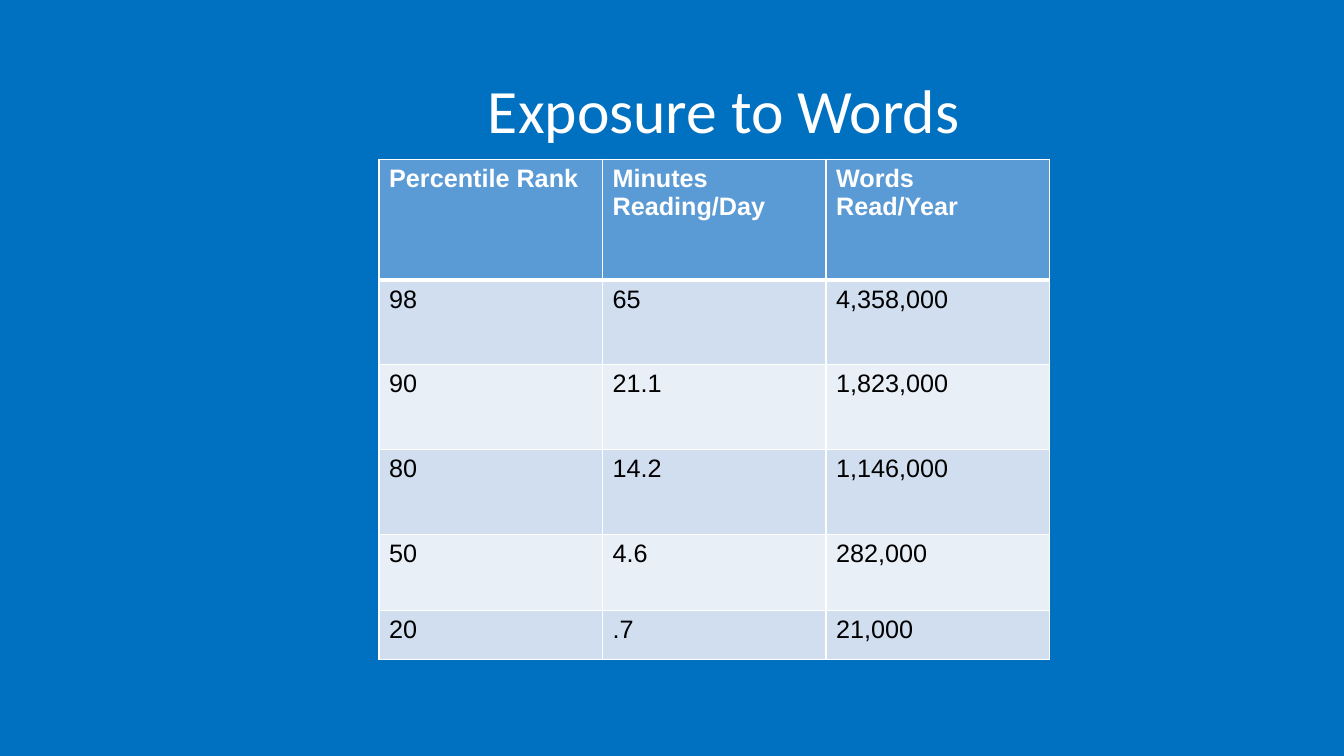
from dataclasses import dataclass

from lxml.etree import SubElement
from pptx import Presentation
from pptx.dml.color import RGBColor as Color
from pptx.enum.text import MSO_ANCHOR as Anchor
from pptx.oxml.ns import qn
from pptx.util import Inches, Pt


@dataclass(frozen=True)
class Theme:
    background: str = "0070C0"
    white: str = "FFFFFF"
    black: str = "000000"
    header: str = "5B9BD5"
    bands: tuple = ("D0DEEF", "E9EFF7")
    title_font: str = "Calibri"
    table_font: str = "Arial"
    title_size: int = 44
    table_size: int = 18
    thin: int = 1
    thick: int = 3


THEME = Theme()
TITLE_BOX = (0.92, 0.4, 11.5, 1.45)
TITLE_INDENT = 3.92
TABLE_BOX = (3.76, 1.58, 6.65, 4.96)
ROW_HEIGHTS = (1.2, 0.84, 0.84, 0.84, 0.76, 0.48)
READING = (
    ("Percentile Rank", "Minutes Reading/Day", "Words Read/Year"),
    ("98", "65", "4,358,000"),
    ("90", "21.1", "1,823,000"),
    ("80", "14.2", "1,146,000"),
    ("50", "4.6", "282,000"),
    ("20", ".7", "21,000"),
)


def style_text(para, font, size, color, bold=False):
    for span in para.runs:
        span.font.name = font
        span.font.size = Pt(size)
        span.font.bold = bold
        span.font.color.rgb = Color.from_string(color)


def add_title(page, box, text):
    frame = page.shapes.add_textbox(*map(Inches, box)).text_frame
    frame.word_wrap = True
    frame.vertical_anchor = Anchor.MIDDLE
    frame.margin_left = Inches(TITLE_INDENT)
    frame.text = text
    para = frame.paragraphs[0]
    para.line_spacing = 0.9
    style_text(para, THEME.title_font, THEME.title_size, THEME.white)


def draw_borders(cell, top, bottom):
    properties = cell._tc.get_or_add_tcPr()
    widths = {"L": THEME.thin, "R": THEME.thin, "T": top, "B": bottom}
    for side, width in widths.items():
        line = SubElement(properties, qn(f"a:ln{side}"), w=str(Pt(width)))
        fill = SubElement(line, qn("a:solidFill"))
        SubElement(fill, qn("a:srgbClr"), val=THEME.white)


def style_cell(cell, row):
    is_header = row == 0
    draw_borders(
        cell,
        top=THEME.thick if row == 1 else THEME.thin,
        bottom=THEME.thick if is_header else THEME.thin,
    )
    fill = THEME.header if is_header else THEME.bands[(row - 1) % 2]
    cell.fill.solid()
    cell.fill.fore_color.rgb = Color.from_string(fill)
    color = THEME.white if is_header else THEME.black
    style_text(cell.text_frame.paragraphs[0], THEME.table_font,
               THEME.table_size, color, is_header)


def add_reading_table(page, box, rows):
    column_count = len(rows[0])
    table = page.shapes.add_table(
        len(rows), column_count, *map(Inches, box)).table
    for column in table.columns:
        column.width = Inches(box[2] / column_count)
    for row, (values, height) in enumerate(zip(rows, ROW_HEIGHTS)):
        table.rows[row].height = Inches(height)
        for column, value in enumerate(values):
            cell = table.cell(row, column)
            cell.text_frame.text = value
            style_cell(cell, row)


def main():
    deck = Presentation()
    deck.slide_width, deck.slide_height = Inches(13.33), Inches(7.5)
    page = deck.slides.add_slide(deck.slide_layouts[6])
    page.background.fill.solid()
    page.background.fill.fore_color.rgb = Color.from_string(THEME.background)
    add_title(page, TITLE_BOX, "Exposure to Words")
    add_reading_table(page, TABLE_BOX, READING)
    deck.save("out.pptx")


if __name__ == "__main__":
    main()
